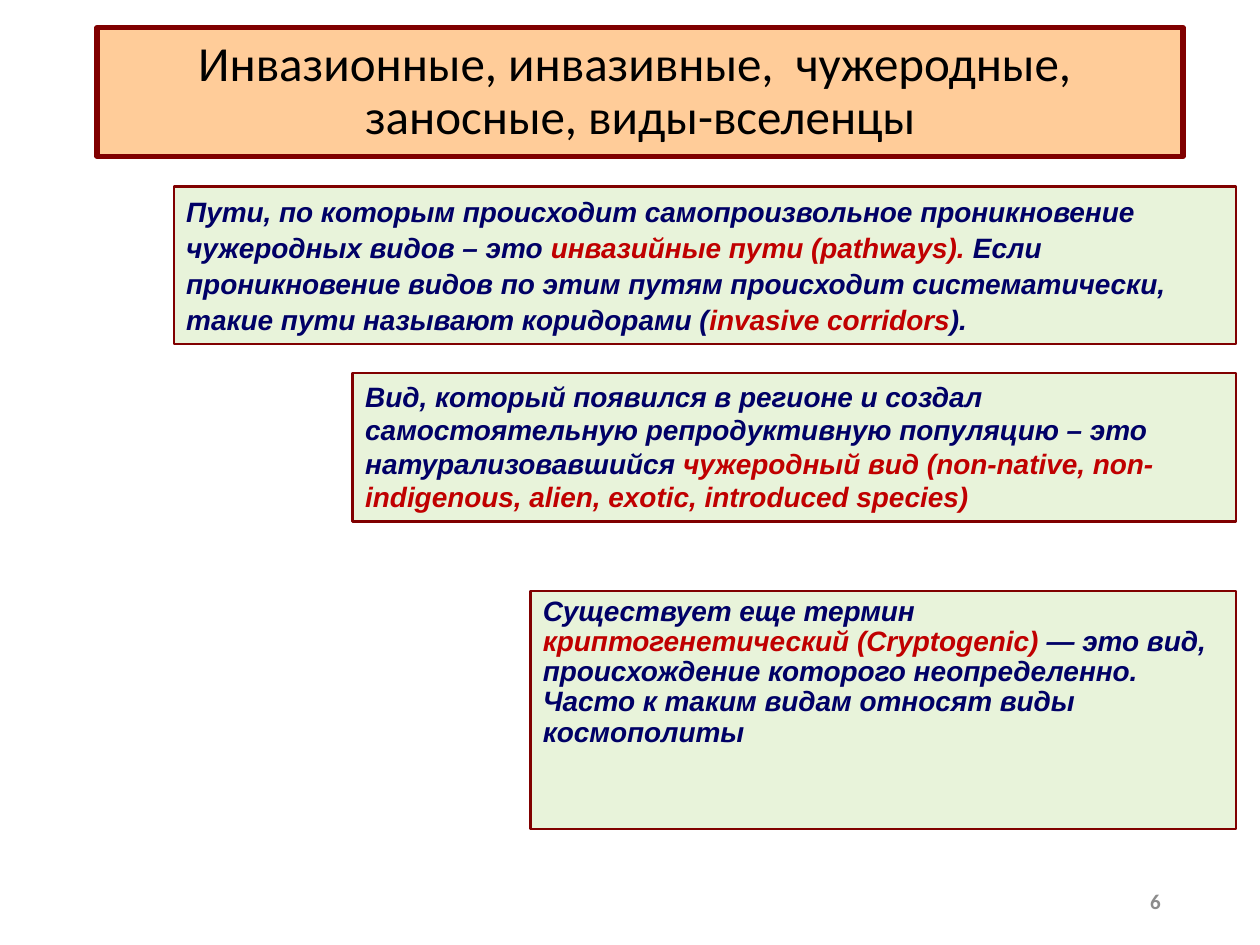
from dataclasses import dataclass

from pptx import Presentation
from pptx.dml.color import RGBColor
from pptx.enum.shapes import MSO_SHAPE
from pptx.enum.text import MSO_ANCHOR, PP_ALIGN
from pptx.util import Inches, Pt


@dataclass(frozen=True)
class Theme:
    heading_font: str = "Calibri"
    body_font: str = "Arial"
    heading_size: float = 28
    body_size: float = 16
    number_size: float = 12
    heading_fill: str = "FFCC99"
    definition_fill: str = "E8F3DA"
    border: str = "800000"
    black: str = "000000"
    navy: str = "000066"
    red: str = "C00000"
    gray: str = "8C8C8C"


def write_text(frame, runs, font, size, bold=False, italic=False,
               align=PP_ALIGN.LEFT, anchor=MSO_ANCHOR.TOP,
               line=1.0, before=0, after=0):
    frame.word_wrap = True
    frame.vertical_anchor = anchor
    paragraph = frame.paragraphs[0]
    paragraph.alignment = align
    paragraph.line_spacing = line
    paragraph.space_before = Pt(before)
    paragraph.space_after = Pt(after)
    for words, color in runs:
        run = paragraph.add_run()
        run.text = words
        run.font.name = font
        run.font.size = Pt(size)
        run.font.bold = bold
        run.font.italic = italic
        run.font.color.rgb = RGBColor.from_string(color)


class SlideBuilder:
    def __init__(self, slide, theme):
        self.slide = slide
        self.theme = theme

    def framed_box(self, left, top, width, height, fill, border_width):
        box = self.slide.shapes.add_shape(
            MSO_SHAPE.RECTANGLE, Inches(left), Inches(top), Inches(width), Inches(height))
        box.shadow.inherit = False
        box.fill.solid()
        box.fill.fore_color.rgb = RGBColor.from_string(fill)
        box.line.color.rgb = RGBColor.from_string(self.theme.border)
        box.line.width = Pt(border_width)
        return box.text_frame

    def heading(self, words):
        theme = self.theme
        frame = self.framed_box(0.77, 0.22, 8.62, 1.02, theme.heading_fill, 3)
        write_text(frame, [(words, theme.black)], theme.heading_font, theme.heading_size,
                   align=PP_ALIGN.CENTER, anchor=MSO_ANCHOR.MIDDLE, line=0.9)

    def definition(self, left, top, height, runs, right=9.81, **spacing):
        theme = self.theme
        frame = self.framed_box(left, top, right - left, height, theme.definition_fill, 1.5)
        write_text(frame, runs, theme.body_font, theme.body_size,
                   bold=True, italic=True, **spacing)

    def page_number(self, number):
        theme = self.theme
        box = self.slide.shapes.add_textbox(
            Inches(7.06), Inches(6.95), Inches(2.25), Inches(0.4))
        write_text(box.text_frame, [(number, theme.gray)], theme.heading_font,
                   theme.number_size, bold=True, align=PP_ALIGN.RIGHT,
                   anchor=MSO_ANCHOR.MIDDLE)


def main():
    presentation = Presentation()
    presentation.slide_width = Inches(10)
    presentation.slide_height = Inches(7.5)
    theme = Theme()
    navy, red = theme.navy, theme.red
    builder = SlideBuilder(
        presentation.slides.add_slide(presentation.slide_layouts[6]), theme)

    builder.heading("Инвазионные, инвазивные,  чужеродные,  заносные, виды-вселенцы")
    builder.definition(4.21, 4.69, 1.89, [
        ("Существует еще термин ", navy),
        ("криптогенетический (Cryptogenic)", red),
        (" — это вид, происхождение которого неопределенно. "
         "Часто к таким видам относят виды космополиты", navy),
    ], line=0.9, before=10)
    builder.page_number("6")
    builder.definition(1.38, 1.48, 1.25, [
        ("Пути, по которым происходит самопроизвольное проникновение "
         "чужеродных видов – это ", navy),
        ("инвазийные пути (pathways). ", red),
        ("Если проникновение видов по этим путям происходит систематически, "
         "такие пути называют коридорами (", navy),
        ("invasive corridors", red),
        (").", navy),
    ], line=1.07, before=10, after=8)
    builder.definition(2.8, 2.96, 1.18, [
        ("Вид, который появился в регионе и создал самостоятельную "
         "репродуктивную популяцию – это натурализовавшийся ", navy),
        ("чужеродный вид (non-native, non-indigenous, alien, exotic, "
         "introduced species)", red),
    ])

    presentation.save("out.pptx")


if __name__ == "__main__":
    main()
